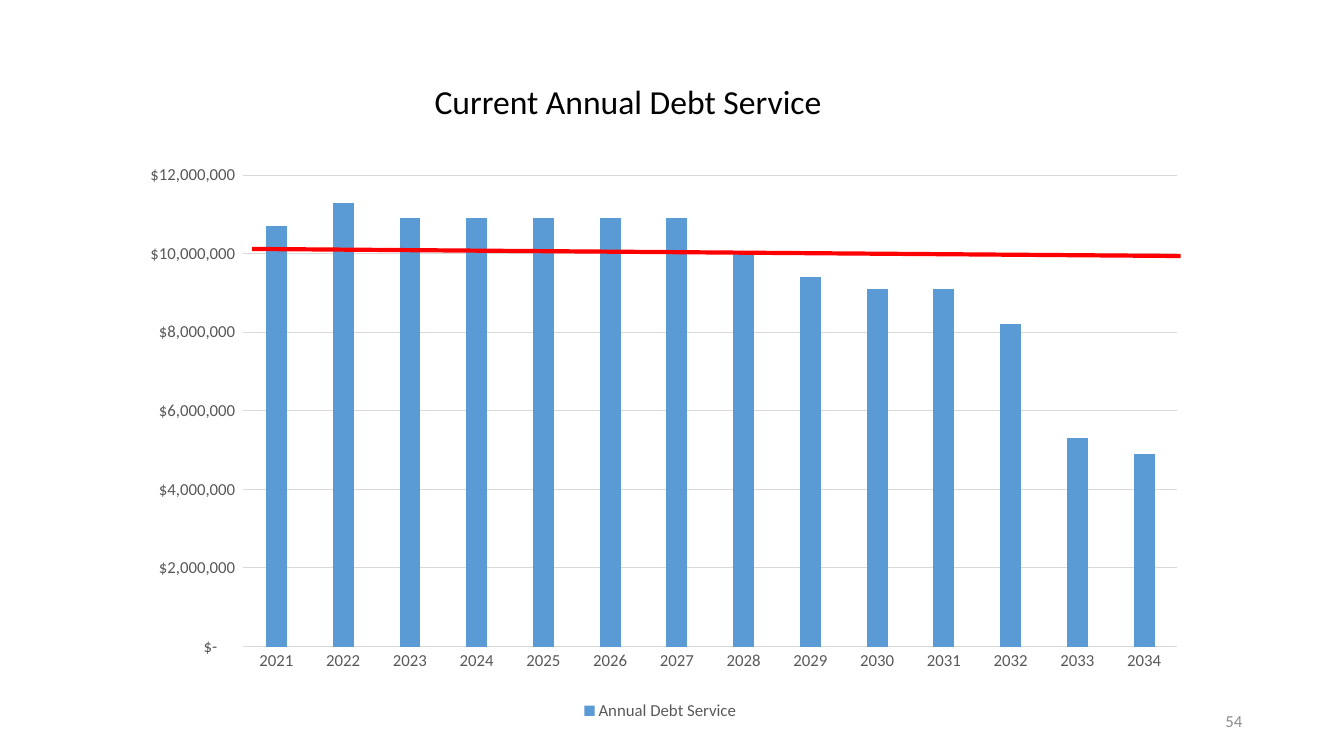
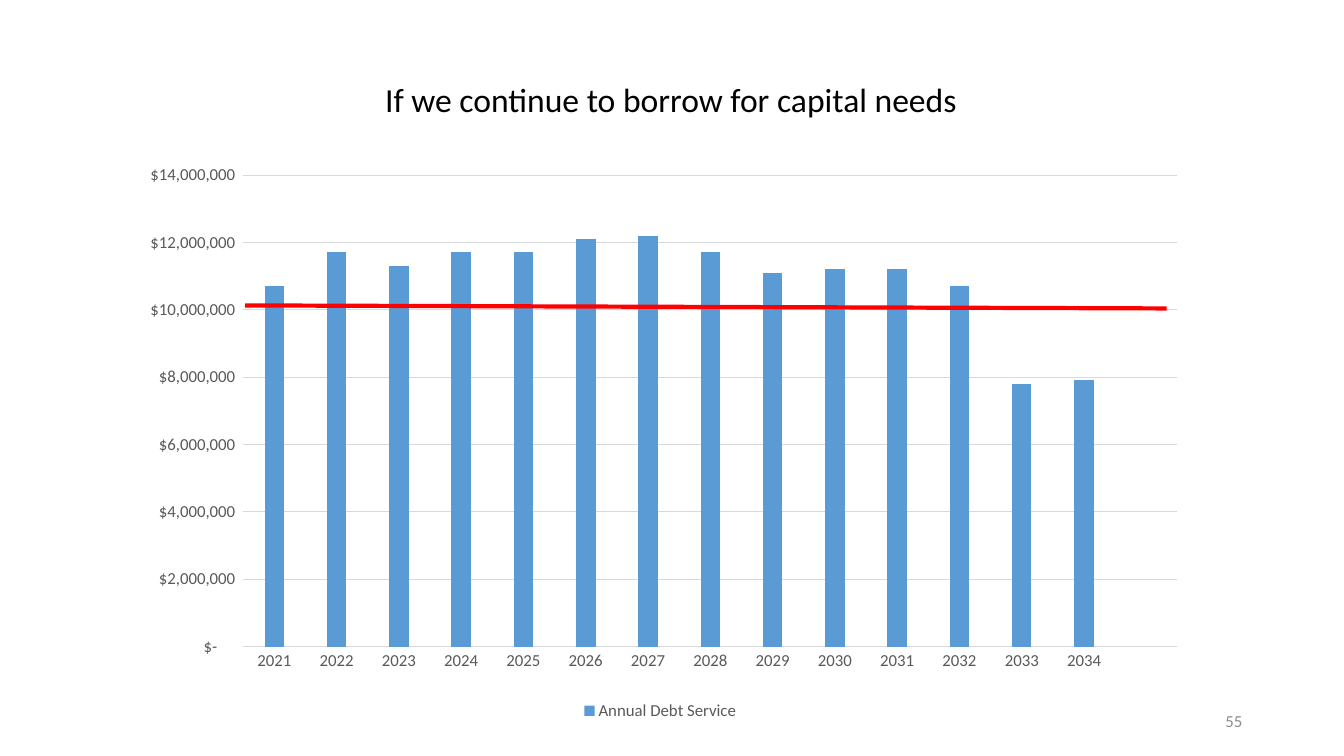
"""Build two slides on annual debt service, each a column chart with a limit line."""
from lxml.etree import SubElement
from pptx import Presentation
from pptx.chart.data import CategoryChartData as Data
from pptx.dml.color import RGBColor as RGB
from pptx.enum.chart import XL_CHART_TYPE as Kind
from pptx.enum.chart import XL_LEGEND_POSITION as Place
from pptx.enum.chart import XL_TICK_MARK as Tick
from pptx.enum.shapes import MSO_CONNECTOR as Joint
from pptx.enum.text import MSO_ANCHOR as Anchor
from pptx.enum.text import MSO_AUTO_SIZE as Fit
from pptx.enum.text import PP_ALIGN as Align
from pptx.oxml import parse_xml
from pptx.oxml.ns import nsdecls, qn
from pptx.util import Inches, Pt

COLORS = {"ink": "000000", "label": "595959", "grid": "D9D9D9",
          "bar": "5B9BD5", "limit": "FF0000", "page": "8C8C8C"}
FACE = "Calibri"
MONEY = '_("$"* #,##0_);_("$"* \\(#,##0\\);_("$"* "-"??_);_(@_)'
MILLION = 1_000_000
YEARS = [str(year) for year in range(2021, 2035)]
PLOT = {"x": 0.099, "y": 0.212, "w": 0.898, "h": 0.676}
SLIDES = [
    {"title": "Current Annual Debt Service", "box": (4.21, 0.75, 4.25, 0.5),
     "years": YEARS, "top": 12, "limit": (2.5, 2.47, 11.71, 2.54), "page": 54,
     "costs": [10.7, 11.3, 10.9, 10.9, 10.9, 10.9, 10.9,
               10, 9.4, 9.1, 9.1, 8.2, 5.3, 4.9]},
    {"title": "If we continue to borrow for capital needs",
     "box": (3.72, 0.73, 5.95, 0.5),
     "years": YEARS + [""], "top": 14, "limit": (2.43, 3.03, 11.57, 3.06), "page": 55,
     "costs": [10.7, 11.7, 11.3, 11.7, 11.7, 12.1, 12.2,
               11.7, 11.1, 11.2, 11.2, 10.7, 7.8, 7.9, None]},
]


def tint(name):
    """Return the named colour."""
    return RGB.from_string(COLORS[name])


def apply(target, **values):
    """Set each given attribute on the target."""
    for name, value in values.items():
        setattr(target, name, value)


def set_font(font, size, color):
    """Format a font with the shared face."""
    apply(font, name=FACE, size=Pt(size), bold=False)
    font.color.rgb = tint(color)


def set_line(line, width, color):
    """Format a line with a width and a colour."""
    line.width = Pt(width)
    line.color.rgb = tint(color)


def set_text(shape, text, size, color, align, anchor):
    """Write one formatted line of text in a shape."""
    frame = shape.text_frame
    frame.text = text
    apply(frame, word_wrap=True, auto_size=Fit.NONE, vertical_anchor=anchor)
    frame.paragraphs[0].alignment = align
    set_font(frame.paragraphs[0].runs[0].font, size, color)


def add_title(slide, text, box):
    """Move and fill the title placeholder."""
    title = slide.shapes.title
    apply(title, **dict(zip(("left", "top", "width", "height"), map(Inches, box))))
    set_text(title, text, 24, "ink", Align.LEFT, Anchor.TOP)


def add_page(slide, number):
    """Add the page number at the lower right."""
    box = slide.shapes.add_textbox(*map(Inches, (9.42, 6.95, 3, 0.4)))
    set_text(box, str(number), 12, "page", Align.RIGHT, Anchor.MIDDLE)


def add_limit(slide, ends):
    """Draw the red limit line across the columns."""
    line = slide.shapes.add_connector(Joint.STRAIGHT, *map(Inches, ends))
    set_line(line.line, 3, "limit")
    SubElement(line._element.spPr, qn("a:effectLst"))


def place_plot(chart):
    """Fix the inner plot area as shares of the chart."""
    area = chart._chartSpace.chart.plotArea
    for old in area.findall(qn("c:layout")):
        area.remove(old)
    modes = "".join(f'<c:{key}Mode val="edge"/>' for key in "xy")
    sizes = "".join(f'<c:{key} val="{share}"/>' for key, share in PLOT.items())
    area.insert(0, parse_xml(
        f'<c:layout {nsdecls("c")}><c:manualLayout><c:layoutTarget val="inner"/>'
        f'{modes}{sizes}</c:manualLayout></c:layout>'))


def set_axes(chart, top):
    """Format both axes, with the value axis in dollars."""
    years, costs = chart.category_axis, chart.value_axis
    for axis in (years, costs):
        apply(axis, major_tick_mark=Tick.NONE, minor_tick_mark=Tick.NONE)
        set_font(axis.tick_labels.font, 12, "label")
    set_line(years.format.line, 0.75, "grid")
    apply(costs, minimum_scale=0, maximum_scale=top * MILLION,
          major_unit=2 * MILLION, has_major_gridlines=True)
    apply(costs.tick_labels, number_format=MONEY, number_format_is_linked=False)
    costs.format.line.fill.background()
    set_line(costs.major_gridlines.format.line, 0.75, "grid")


def add_columns(slide, years, costs, top):
    """Add the column chart of yearly costs, given in millions."""
    data = Data(number_format=MONEY)
    data.categories = years
    data.add_series("Annual Debt Service",
                    [None if cost is None else round(cost * MILLION) for cost in costs])
    frame = slide.shapes.add_chart(
        Kind.COLUMN_CLUSTERED, *map(Inches, (1.39, 0.27, 10.32, 6.92)), data)
    chart = frame.chart
    apply(chart, has_title=False, has_legend=True)
    set_font(chart.font, 10, "ink")
    apply(chart.legend, position=Place.BOTTOM, include_in_layout=False)
    set_font(chart.legend.font, 12, "label")
    plot = chart.plots[0]
    apply(plot, gap_width=219, overlap=-27, vary_by_categories=False)
    fill = plot.series[0].format.fill
    fill.solid()
    fill.fore_color.rgb = tint("bar")
    set_axes(chart, top)
    place_plot(chart)


def main():
    """Build and save the slides."""
    deck = Presentation()
    apply(deck, slide_width=Inches(13.33), slide_height=Inches(7.5))
    for part in SLIDES:
        slide = deck.slides.add_slide(deck.slide_layouts[5])
        add_columns(slide, part["years"], part["costs"], part["top"])
        add_title(slide, part["title"], part["box"])
        add_limit(slide, part["limit"])
        add_page(slide, part["page"])
    deck.save("out.pptx")


if __name__ == "__main__":
    main()
